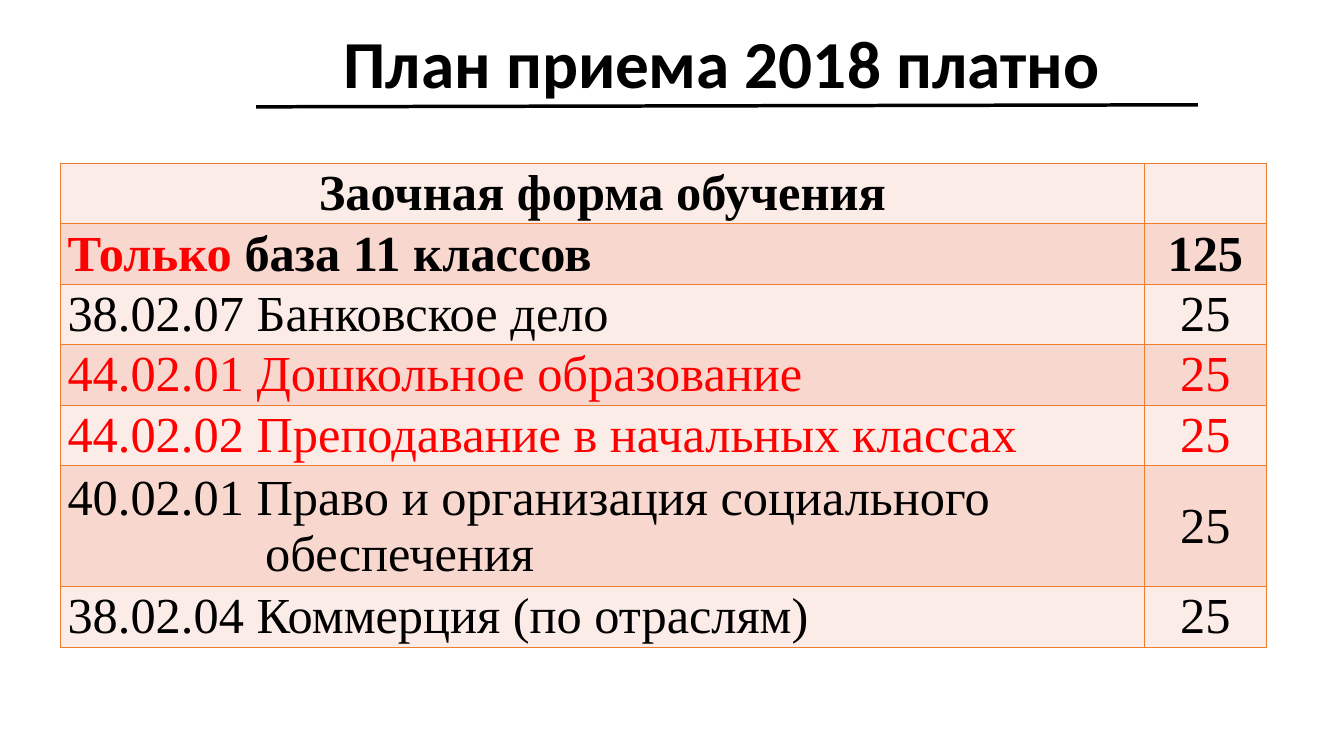
from lxml.etree import SubElement
from pptx import Presentation
from pptx.dml.color import RGBColor
from pptx.enum.shapes import MSO_CONNECTOR
from pptx.enum.text import MSO_ANCHOR, MSO_AUTO_SIZE, PP_ALIGN
from pptx.oxml import parse_xml
from pptx.oxml.ns import nsdecls, qn
from pptx.util import Inches, Pt

COLORS = {
    "black": "000000",
    "red": "FF0000",
    "border": "ED7D31",
    "light": "FCECE8",
    "dark": "F8D7CE",
}

ADMISSIONS = [
    ([("Заочная форма обучения", "black")], "", True),
    ([("Только", "red"), (" база 11 классов", "black")], "125", True),
    ([("38.02.07 Банковское дело", "black")], "25", False),
    ([("44.02.01 Дошкольное образование", "red")], "25", False),
    ([("44.02.02 Преподавание в начальных классах", "red")], "25", False),
    ([("40.02.01 Право и организация социального обеспечения", "black")], "25", False),
    ([("38.02.04 Коммерция (по отраслям)", "black")], "25", False),
]
WRAPPED_ROW = 5


def rgb(name):
    return RGBColor.from_string(COLORS[name])


def add_title(page, left, top, width, height):
    title = page.shapes.title
    title.left, title.top = Inches(left), Inches(top)
    title.width, title.height = Inches(width), Inches(height)
    frame = title.text_frame
    frame.text = "План приема 2018 платно"
    frame.auto_size = MSO_AUTO_SIZE.NONE
    frame.vertical_anchor = MSO_ANCHOR.TOP
    para = frame.paragraphs[0]
    para.alignment = PP_ALIGN.CENTER
    para.font.name = "Calibri"
    para.font.size = Pt(48)
    para.font.bold = True
    para.font.color.rgb = rgb("black")

    underline = page.shapes.add_connector(
        MSO_CONNECTOR.STRAIGHT,
        Inches(left - 0.04), Inches(top + 0.9),
        Inches(left + width + 0.14), Inches(top + 0.88),
    )
    underline.line.color.rgb = rgb("black")
    underline.line.width = Pt(2.5)
    SubElement(underline._element.spPr, qn("a:effectLst"))


def set_borders(cell):
    properties = cell._tc.get_or_add_tcPr()
    for index, side in enumerate(("lnL", "lnR", "lnT", "lnB")):
        properties.insert(index, parse_xml(
            f'<a:{side} {nsdecls("a")} w="12700"><a:solidFill>'
            f'<a:srgbClr val="{COLORS["border"]}"/></a:solidFill></a:{side}>'
        ))


def fill_cell(cell, spans, bold, alignment, shade):
    cell.fill.solid()
    cell.fill.fore_color.rgb = rgb(shade)
    set_borders(cell)
    cell.margin_left = cell.margin_right = Inches(0.07)
    cell.margin_top = cell.margin_bottom = 0
    cell.vertical_anchor = MSO_ANCHOR.MIDDLE
    para = cell.text_frame.paragraphs[0]
    para.alignment = alignment
    para.space_before = para.space_after = Pt(6)
    para.font.name = "Times New Roman"
    para.font.size = Pt(36)
    para.font.bold = bold
    for text, color in spans:
        span = para.add_run()
        span.text = text
        span.font.color.rgb = rgb(color)


def add_admissions(page, left, top, width, height):
    count = len(ADMISSIONS)
    table = page.shapes.add_table(
        count, 2, Inches(left), Inches(top), Inches(width), Inches(height)
    ).table
    table.first_row = table.horz_banding = False
    places_width = 1.21
    table.columns[0].width = Inches(width - places_width)
    table.columns[1].width = Inches(places_width)
    line_height = height / (count + 1)

    for index, (spans, places, bold) in enumerate(ADMISSIONS):
        lines = 2 if index == WRAPPED_ROW else 1
        table.rows[index].height = Inches(line_height * lines)
        shade = "dark" if index % 2 else "light"
        alignment = PP_ALIGN.LEFT if index else PP_ALIGN.CENTER
        fill_cell(table.cell(index, 0), spans, bold, alignment, shade)
        places_spans = [(places, spans[-1][1])] if places else []
        fill_cell(table.cell(index, 1), places_spans, bold, PP_ALIGN.CENTER, shade)

    wrapped = table.cell(WRAPPED_ROW, 0).text_frame.paragraphs[0]
    indent = wrapped._p.get_or_add_pPr()
    indent.set("marL", str(Inches(1.96)))
    indent.set("indent", str(-Inches(1.96)))


def main():
    deck = Presentation()
    deck.slide_width, deck.slide_height = Inches(13.33), Inches(7.5)
    page = deck.slides.add_slide(deck.slide_layouts[5])
    add_title(page, 2.58, 0.16, 9.16, 0.91)
    add_admissions(page, 0.6, 1.62, 11.96, 4.8)
    deck.save("out.pptx")


if __name__ == "__main__":
    main()
